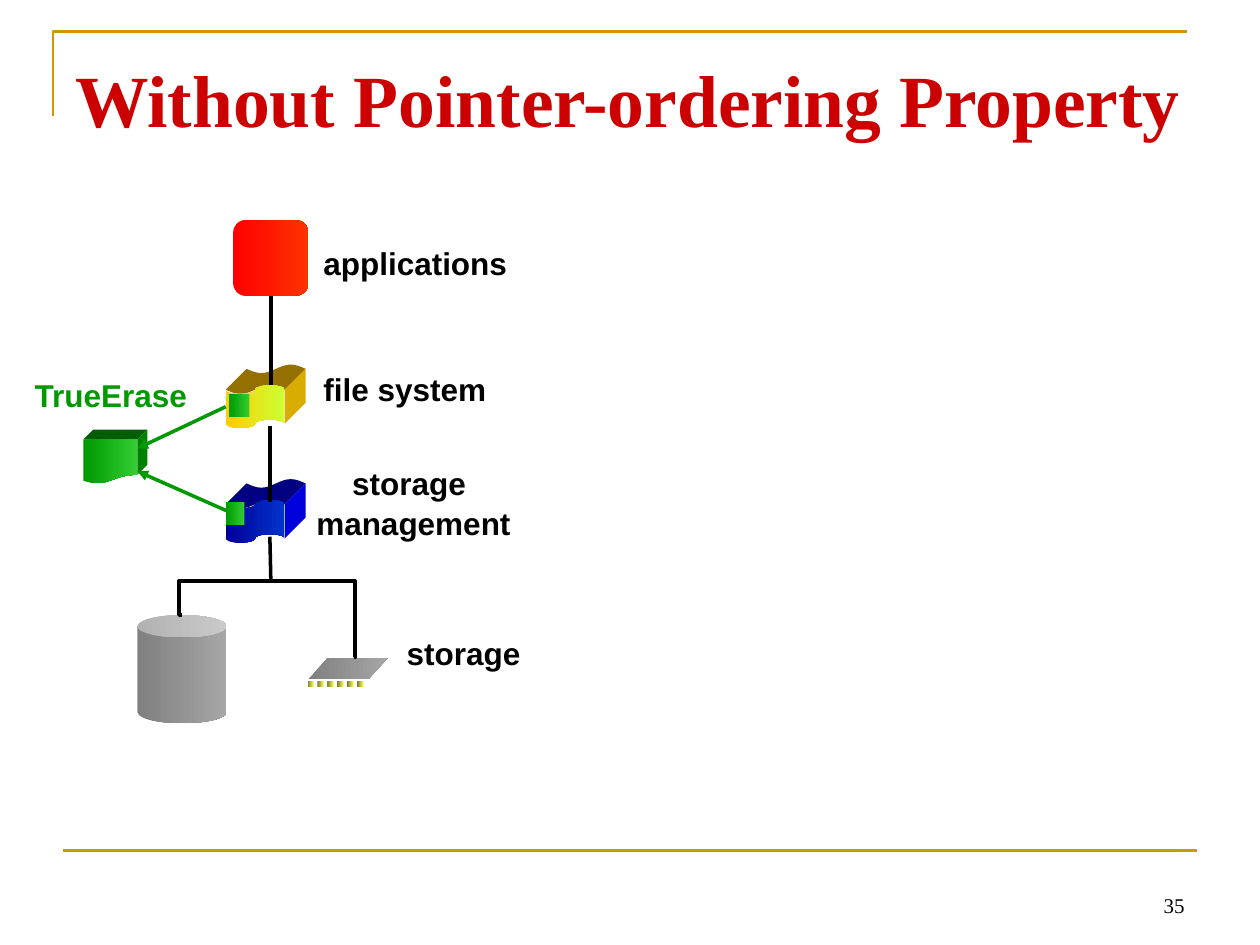
import math
from dataclasses import dataclass

import lxml.etree
import pptx
import pptx.dml.color
import pptx.enum.shapes
import pptx.enum.text
import pptx.oxml.ns
import pptx.util

Cm = pptx.util.Cm
Pt = pptx.util.Pt
Kind = pptx.enum.shapes.MSO_SHAPE
Link = pptx.enum.shapes.MSO_CONNECTOR
Align = pptx.enum.text.PP_ALIGN
Anchor = pptx.enum.text.MSO_ANCHOR


@dataclass(frozen=True)
class Theme:
    heading_font: str = "Times New Roman"
    label_font: str = "Arial"
    title_size: float = 42
    label_size: float = 18
    number_size: float = 12
    rule_width: float = 1.5
    link_width: float = 2
    gold: str = "CC9900"
    title: str = "CC0000"
    ink: str = "000000"
    green: str = "009900"
    red_fill: tuple = ("FF0000", "FF3300")
    gray_fill: tuple = ("808080", "A6A6A6")
    pin_fill: tuple = ("76762F", "FFFF66")
    blue_fill: tuple = ("000099", "0033CC")
    yellow_fill: tuple = ("FFCC00", "CCFF33")
    green_fill: tuple = ("009900", "33CC33")
    blue_depth: tuple = ("000080", "0000DD")
    yellow_depth: tuple = ("947000", "D9AD00")
    green_depth: tuple = ("005C00", "008000")


THEME = Theme()


@dataclass(frozen=True)
class Piece:
    kind: Kind
    left: float
    top: float
    width: float
    height: float
    fill: tuple


@dataclass(frozen=True)
class Block:
    """A piece with depth: its top and side faces recede up and to the right."""
    body: Piece
    depth: float
    faces: tuple
    wave: float  # height of the wavy top edge, as a share of the body height
    side_end: float  # where the right edge ends, as a share of the body height


@dataclass(frozen=True)
class Label:
    lines: tuple
    left: float
    top: float
    width: float
    height: float
    size: float = THEME.label_size
    font: str = THEME.label_font
    color: str = THEME.ink
    bold: bool = True
    align: Align = Align.LEFT
    anchor: Anchor = Anchor.TOP
    spacing: float = 1.05


@dataclass(frozen=True)
class Line:
    start: tuple
    end: tuple
    color: str = THEME.ink
    width: float = THEME.link_width
    arrow: bool = False
    bend: float = 0  # place of the elbow along the width; 0 means straight


APPLICATION = Piece(Kind.ROUNDED_RECTANGLE, 4.7, 4.44, 1.52, 1.52, THEME.red_fill)
DISK = Piece(Kind.CAN, 2.77, 12.4, 1.8, 2.18, THEME.gray_fill)
CHIP = Piece(Kind.PARALLELOGRAM, 6.22, 13.26, 1.6, 0.43, THEME.gray_fill)
PINS = [Piece(Kind.RECTANGLE, 6.2 + 0.2 * i, 13.72, 0.13, 0.13, THEME.pin_fill)
        for i in range(6)]
STORAGE_MANAGEMENT = Block(
    Piece(Kind.FLOWCHART_PUNCHED_TAPE, 4.55, 10.08, 1.19, 0.86, THEME.blue_fill),
    0.42, THEME.blue_depth, 0.1, 0.9)
FILE_SYSTEM = Block(
    Piece(Kind.FLOWCHART_PUNCHED_TAPE, 4.55, 7.77, 1.19, 0.86, THEME.yellow_fill),
    0.42, THEME.yellow_depth, 0.1, 0.9)
ERASER = Block(
    Piece(Kind.FLOWCHART_DOCUMENT, 1.68, 8.86, 1.09, 0.89, THEME.green_fill),
    0.2, THEME.green_depth, 0, 0.8)
HOOKS = [Piece(Kind.RECTANGLE, 4.55, 10.13, 0.38, 0.46, THEME.green_fill),
         Piece(Kind.RECTANGLE, 4.62, 7.95, 0.41, 0.46, THEME.green_fill)]

FORK = (5.46, 11.71)
LINKS = [
    Line((5.46, 5.97), (5.46, 7.77)),
    Line((5.44, 8.59), (5.44, 10.11)),
    Line((5.44, 10.82), FORK),
    Line(FORK, (7.14, 13.26), bend=1.01),
    Line(FORK, (3.68, 12.4), bend=1.04),
    Line((4.55, 8.2), (2.77, 9.04), THEME.green, arrow=True),
    Line((4.6, 10.31), (2.77, 9.5), THEME.green, arrow=True),
]
LABELS = [
    Label(("Without Pointer-ordering Property",), 1.27, 0.97, 22.86, 3.6,
          THEME.title_size, THEME.heading_font, THEME.title, spacing=1),
    Label(("35",), 18.21, 17.35, 5.92, 1.27, THEME.number_size,
          THEME.heading_font, bold=False, align=Align.RIGHT,
          anchor=Anchor.BOTTOM, spacing=1),
    Label(("applications",), 6.27, 4.75, 5.33, 1.3),
    Label(("file system",), 6.27, 7.29, 4.8, 1.3),
    Label(("storage ", "management"), 6.1, 9.19, 4.47, 1.8, align=Align.CENTER),
    Label(("storage",), 7.95, 12.62, 3.78, 1.3),
    Label(("TrueErase",), 0.43, 7.42, 3.61, 1.02, color=THEME.green,
          align=Align.CENTER),
]


def rgb(value: str):
    return pptx.dml.color.RGBColor.from_string(value)


def add_piece(slide, piece: Piece) -> None:
    shape = slide.shapes.add_shape(piece.kind, Cm(piece.left), Cm(piece.top),
                                   Cm(piece.width), Cm(piece.height))
    shape.shadow.inherit = False
    shape.line.fill.background()
    if piece.kind == Kind.PARALLELOGRAM:
        shape.adjustments[0] = 0.91
    shape.fill.gradient()
    shape.fill.gradient_angle = 0
    for stop, color in zip(shape.fill.gradient_stops, piece.fill):
        stop.color.rgb = rgb(color)


def add_outline(slide, points: list, close: bool):
    corners = [(Cm(x), Cm(y)) for x, y in points]
    builder = slide.shapes.build_freeform(*corners[0])
    builder.add_line_segments(corners[1:], close=close)
    shape = builder.convert_to_shape()
    shape.shadow.inherit = False
    return shape


def add_block(slide, block: Block) -> None:
    body, depth = block.body, block.depth
    right = body.left + body.width
    steps = 16
    edge = [(body.left + body.width * i / steps,
             body.top + body.height * block.wave
             * (1 + math.sin(2 * math.pi * i / steps)))
            for i in range(steps + 1)]
    side = [edge[-1], (right, body.top + body.height * block.side_end)]
    for front, color in zip((edge, side), block.faces):
        back = [(x + depth, y - depth) for x, y in reversed(front)]
        face = add_outline(slide, front + back, close=True)
        face.fill.solid()
        face.fill.fore_color.rgb = rgb(color)
        face.line.fill.background()
    add_piece(slide, body)


def add_line(slide, line: Line) -> None:
    kind = Link.ELBOW if line.bend else Link.STRAIGHT
    connector = slide.shapes.add_connector(
        kind, *(Cm(value) for value in line.start + line.end))
    connector.line.color.rgb = rgb(line.color)
    connector.line.width = Pt(line.width)
    qualified = pptx.oxml.ns.qn
    properties = connector._element.spPr
    if line.bend:
        guides = properties.find(".//" + qualified("a:avLst"))
        lxml.etree.SubElement(guides, qualified("a:gd"), name="adj1",
                              fmla=f"val {round(line.bend * 100000)}")
    if line.arrow:
        lxml.etree.SubElement(properties.find(qualified("a:ln")),
                              qualified("a:tailEnd"), type="triangle")
    lxml.etree.SubElement(properties, qualified("a:effectLst"))


def add_label(slide, label: Label) -> None:
    box = slide.shapes.add_textbox(Cm(label.left), Cm(label.top),
                                   Cm(label.width), Cm(label.height))
    frame = box.text_frame
    frame.word_wrap = True
    frame.vertical_anchor = label.anchor
    for index, text in enumerate(label.lines):
        paragraph = frame.add_paragraph() if index else frame.paragraphs[0]
        paragraph.alignment = label.align
        paragraph.line_spacing = label.spacing
        run = paragraph.add_run()
        run.text = text
        run.font.name = label.font
        run.font.size = Pt(label.size)
        run.font.bold = label.bold
        run.font.color.rgb = rgb(label.color)


def add_frame(slide) -> None:
    """Draw the corner above the title and the rule at the foot."""
    corner = add_outline(slide, [(1.07, 2.34), (1.07, 0.64), (23.93, 0.64)],
                         close=False)
    corner.fill.background()
    corner.line.color.rgb = rgb(THEME.gold)
    corner.line.width = Pt(THEME.rule_width)
    add_line(slide, Line((1.27, 17.15), (24.13, 17.15), THEME.gold,
                         THEME.rule_width))


def main() -> None:
    presentation = pptx.Presentation()
    presentation.slide_width = Cm(25.4)
    presentation.slide_height = Cm(19.05)
    slide = presentation.slides.add_slide(presentation.slide_layouts[6])
    add_frame(slide)
    for piece in [APPLICATION, DISK, CHIP, *PINS]:
        add_piece(slide, piece)
    for block in (STORAGE_MANAGEMENT, FILE_SYSTEM, ERASER):
        add_block(slide, block)
    for link in LINKS:
        add_line(slide, link)
    for label in LABELS:
        add_label(slide, label)
    for hook in HOOKS:
        add_piece(slide, hook)
    presentation.save("out.pptx")


if __name__ == "__main__":
    main()
